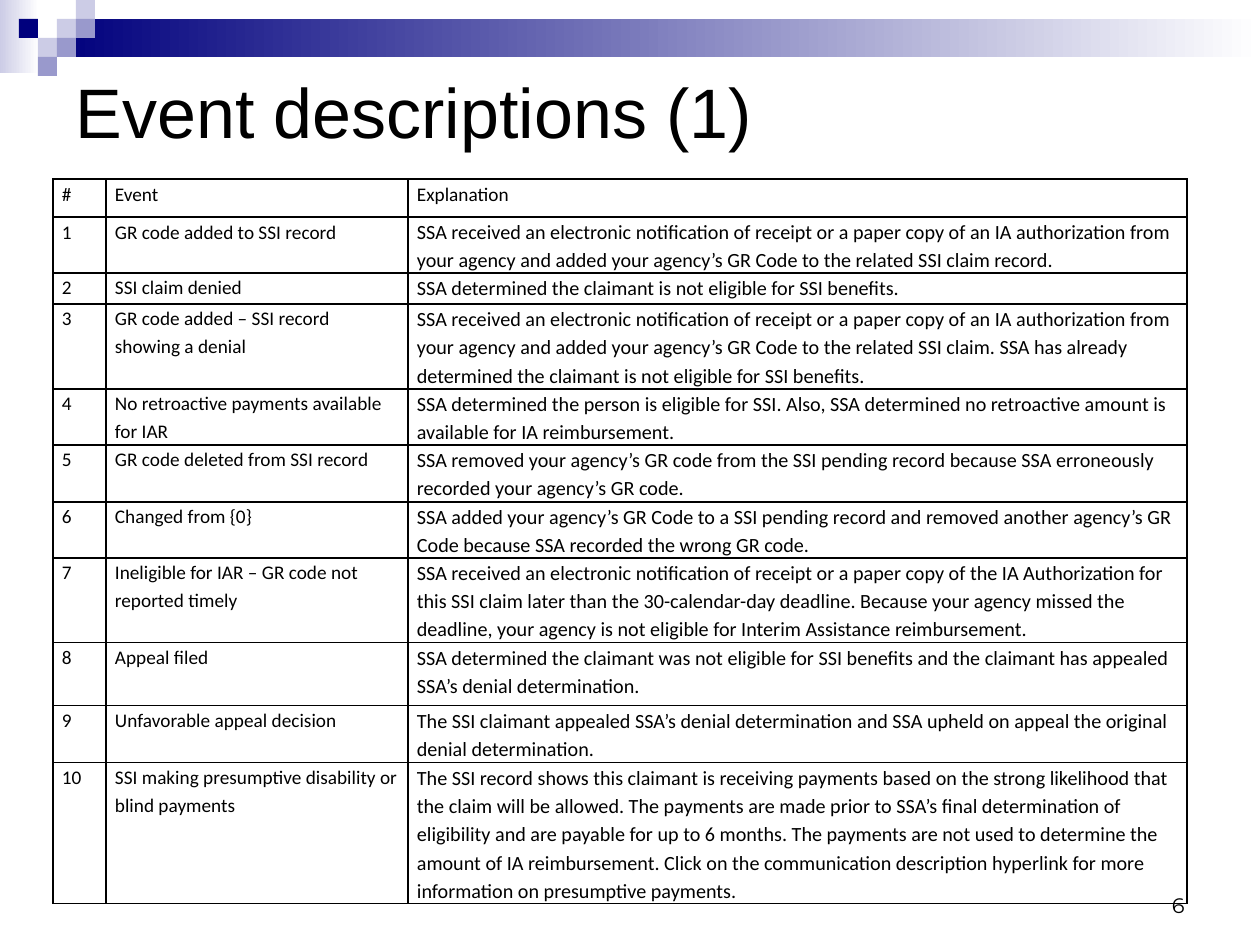
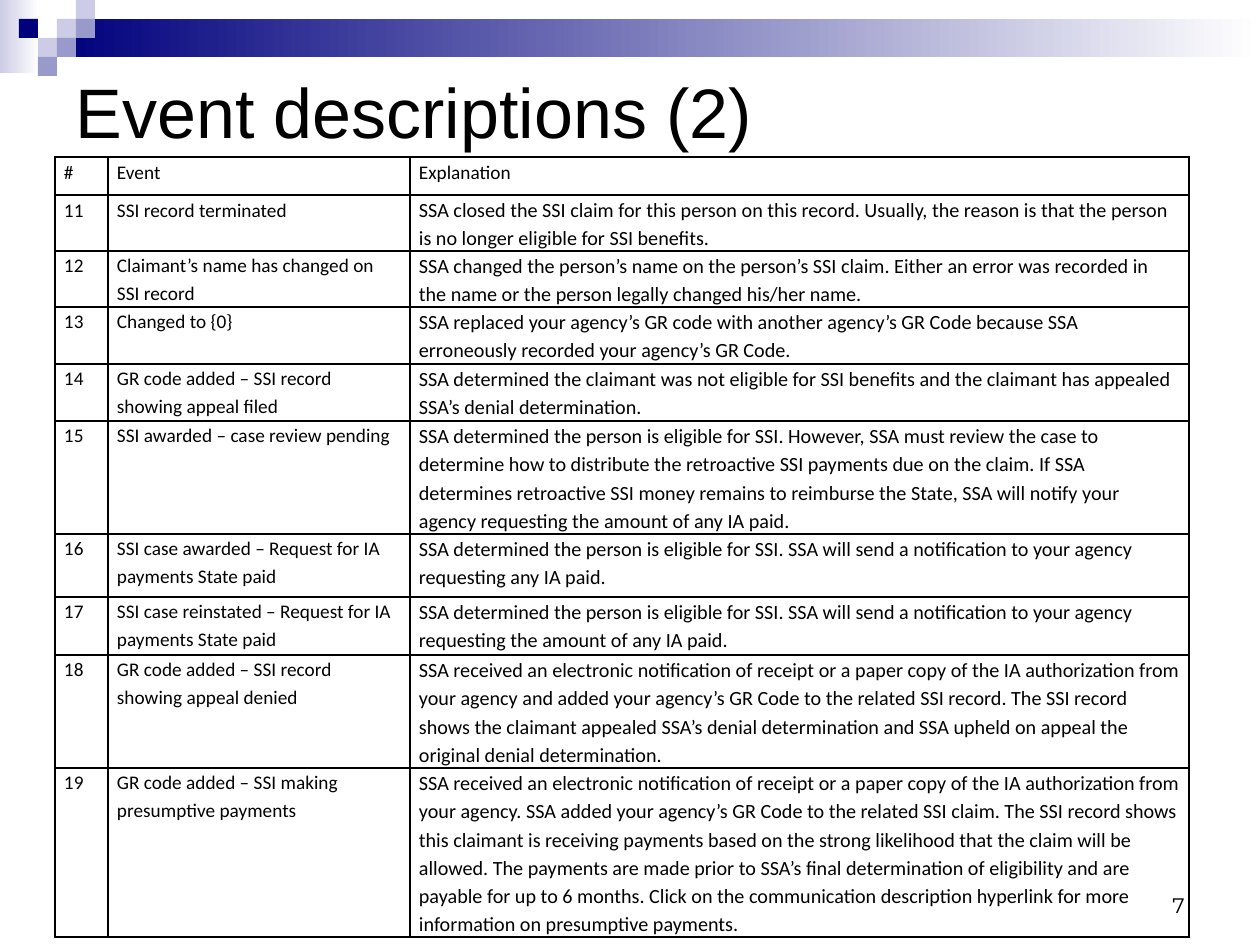
from lxml import etree
from pptx import Presentation
from pptx import util as u
from pptx.dml.color import RGBColor
from pptx.enum import shapes, text
from pptx.oxml.ns import qn

C = {"ink": "000000", "navy": "00007D", "mid": "9999CC",
     "pale": "CCCCE6", "white": "FFFFFF"}
UNIT = 19  # side of one mosaic square
MOSAIC = [(3, 1, "pale"), (4, 0, "pale"), (4, 1, "mid"), (2, 2, "pale"),
          (1, 1, "navy"), (3, 2, "mid"), (2, 3, "mid")]  # column, row, colour
COLS = (53, 302, 779)
HEADER = (38, "#", "Event", "Explanation")

# Row height, event, explanation
EVENTS_1 = [
    (56, "GR code added to SSI record",
     "SSA received an electronic notification of receipt or a paper copy of an IA authorization "
     "from your agency and added your agency’s GR Code to the related SSI claim record."),
    (31, "SSI claim denied",
     "SSA determined the claimant is not eligible for SSI benefits."),
    (85, "GR code added – SSI record showing a denial",
     "SSA received an electronic notification of receipt or a paper copy of an IA authorization "
     "from your agency and added your agency’s GR Code to the related SSI claim. SSA has already "
     "determined the claimant is not eligible for SSI benefits."),
    (56, "No retroactive payments available for IAR",
     "SSA determined the person is eligible for SSI. Also, SSA determined no retroactive amount "
     "is available for IA reimbursement."),
    (57, "GR code deleted from SSI record",
     "SSA removed your agency’s GR code from the SSI pending record because SSA erroneously "
     "recorded your agency’s GR code."),
    (56, "Changed from {0}",
     "SSA added your agency’s GR Code to a SSI pending record and removed another agency’s GR "
     "Code because SSA recorded the wrong GR code."),
    (85, "Ineligible for IAR – GR code not reported timely",
     "SSA received an electronic notification of receipt or a paper copy of the IA Authorization "
     "for this SSI claim later than the 30-calendar-day deadline. Because your agency missed the "
     "deadline, your agency is not eligible for Interim Assistance reimbursement."),
    (63, "Appeal filed",
     "SSA determined the claimant was not eligible for SSI benefits and the claimant has appealed "
     "SSA’s denial determination."),
    (57, "Unfavorable appeal decision",
     "The SSI claimant appealed SSA’s denial determination and SSA upheld on appeal the original "
     "denial determination."),
    (141, "SSI making presumptive disability or blind payments",
     "The SSI record shows this claimant is receiving payments based on the strong likelihood "
     "that the claim will be allowed. The payments are made prior to SSA’s final determination of "
     "eligibility and are payable for up to 6 months. The payments are not used to determine the "
     "amount of IA reimbursement. Click on the communication description hyperlink for more "
     "information on presumptive payments."),
]
EVENTS_2 = [
    (56, "SSI record terminated",
     "SSA closed the SSI claim for this person on this record. Usually, the reason is that the "
     "person is no longer eligible for SSI benefits."),
    (56, "Claimant’s name has changed on SSI record",
     "SSA changed the person’s name on the person’s SSI claim. Either an error was recorded in "
     "the name or the person legally changed his/her name."),
    (57, "Changed to {0}",
     "SSA replaced your agency’s GR code with another agency’s GR Code because SSA erroneously "
     "recorded your agency’s GR Code."),
    (57, "GR code added – SSI record showing appeal filed",
     "SSA determined the claimant was not eligible for SSI benefits and the claimant has appealed "
     "SSA’s denial determination."),
    (113, "SSI awarded – case review pending",
     "SSA determined the person is eligible for SSI. However, SSA must review the case to "
     "determine how to distribute the retroactive SSI payments due on the claim. If SSA "
     "determines retroactive SSI money remains to reimburse the State, SSA will notify your "
     "agency requesting the amount of any IA paid."),
    (63, "SSI case awarded – Request for IA payments State paid",
     "SSA determined the person is eligible for SSI. SSA will send a notification to your agency "
     "requesting any IA paid."),
    (58, "SSI case reinstated – Request for IA payments State paid",
     "SSA determined the person is eligible for SSI. SSA will send a notification to your agency "
     "requesting the amount of any IA paid."),
    (113, "GR code added – SSI record showing appeal denied",
     "SSA received an electronic notification of receipt or a paper copy of the IA authorization "
     "from your agency and added your agency’s GR Code to the related SSI record. The SSI record "
     "shows the claimant appealed SSA’s denial determination and SSA upheld on appeal the "
     "original denial determination."),
    (169, "GR code added – SSI making presumptive payments",
     "SSA received an electronic notification of receipt or a paper copy of the IA authorization "
     "from your agency. SSA added your agency’s GR Code to the related SSI claim. The SSI record "
     "shows this claimant is receiving payments based on the strong likelihood that the claim "
     "will be allowed. The payments are made prior to SSA’s final determination of eligibility "
     "and are payable for up to 6 months. Click on the communication description hyperlink for "
     "more information on presumptive payments."),
]


def px(n):
    return u.Emu(round(n * 914400 / 126))


def rgb(name):
    return RGBColor.from_string(C[name])


def style(p, font, size, align=text.PP_ALIGN.LEFT):
    p.alignment = align
    p.font.name, p.font.size = font, u.Pt(size)
    p.font.color.rgb = rgb("ink")


def rect(s, box, *colours):
    """Add a borderless rectangle; two colours make a left-to-right gradient."""
    sp = s.shapes.add_shape(shapes.MSO_SHAPE.RECTANGLE, *map(px, box))
    sp.shadow.inherit = False
    sp.line.fill.background()
    if len(colours) == 1:
        sp.fill.solid()
        sp.fill.fore_color.rgb = rgb(colours[0])
        return
    sp.fill.gradient()
    sp.fill.gradient_angle = 0
    for stop, colour in zip(sp.fill.gradient_stops, colours):
        stop.color.rgb = rgb(colour)


def top_band(s, x, y, w):
    rect(s, (x, y, 39, 73), "pale", "white")
    rect(s, (x + 3 * UNIT, y + UNIT, w - 3 * UNIT, 2 * UNIT), "navy", "white")
    for col, row, colour in MOSAIC:
        rect(s, (x + col * UNIT, y + row * UNIT, UNIT, UNIT), colour)


def page_number(s, box, number):
    tf = s.shapes.add_textbox(*map(px, box)).text_frame
    tf.word_wrap = True
    tf.vertical_anchor = text.MSO_ANCHOR.BOTTOM
    tf.text = str(number)
    style(tf.paragraphs[0], "Montserrat", 12, text.PP_ALIGN.RIGHT)


def title(s, box, words):
    sp = s.shapes.title
    sp.left, sp.top, sp.width, sp.height = map(px, box)
    tf = sp.text_frame
    tf.text = words
    tf.auto_size = text.MSO_AUTO_SIZE.NONE
    tf.vertical_anchor = text.MSO_ANCHOR.MIDDLE
    style(tf.paragraphs[0], "Arial", 40)


def border(cell):
    tcPr = cell._tc.get_or_add_tcPr()
    for side in ("lnL", "lnR", "lnT", "lnB"):
        ln = etree.SubElement(tcPr, qn("a:" + side), w=str(u.Pt(1)))
        fill = etree.SubElement(ln, qn("a:solidFill"))
        etree.SubElement(fill, qn("a:srgbClr"), val=C["ink"])


def event_table(s, x, y, first, events):
    rows = [HEADER] + [(h, str(n), event, explanation)
                       for n, (h, event, explanation) in enumerate(events, first)]
    box = (x, y, sum(COLS), sum(row[0] for row in rows))
    table = s.shapes.add_table(len(rows), len(COLS), *map(px, box)).table
    table.first_row = table.horz_banding = False
    for column, width in zip(table.columns, COLS):
        column.width = px(width)
    for r, (height, *words) in enumerate(rows):
        table.rows[r].height = px(height)
        for c, content in enumerate(words):
            cell = table.cell(r, c)
            cell.margin_left = cell.margin_right = px(9)
            cell.margin_top = cell.margin_bottom = 0
            border(cell)
            cell.fill.background()
            cell.text = content
            p = cell.text_frame.paragraphs[0]
            p.line_spacing = 1.15
            style(p, "Calibri", 11.5 if r and c == 2 else 11)


def event_slide(prs, part, page, x, y, first, events):
    s = prs.slides.add_slide(prs.slide_layouts[5])  # title only
    top_band(s, 0, 0, 1260)
    page_number(s, (903, 861, 294, 63), page)
    title(s, (63, 63, 1134, 95), f"Event descriptions ({part})")
    event_table(s, x, y, first, events)


def main():
    prs = Presentation()
    prs.slide_width, prs.slide_height = px(1260), px(945)
    event_slide(prs, 1, 6, 53, 179, 1, EVENTS_1)
    event_slide(prs, 2, 7, 55, 157, 11, EVENTS_2)
    prs.save("out.pptx")


if __name__ == "__main__":
    main()
